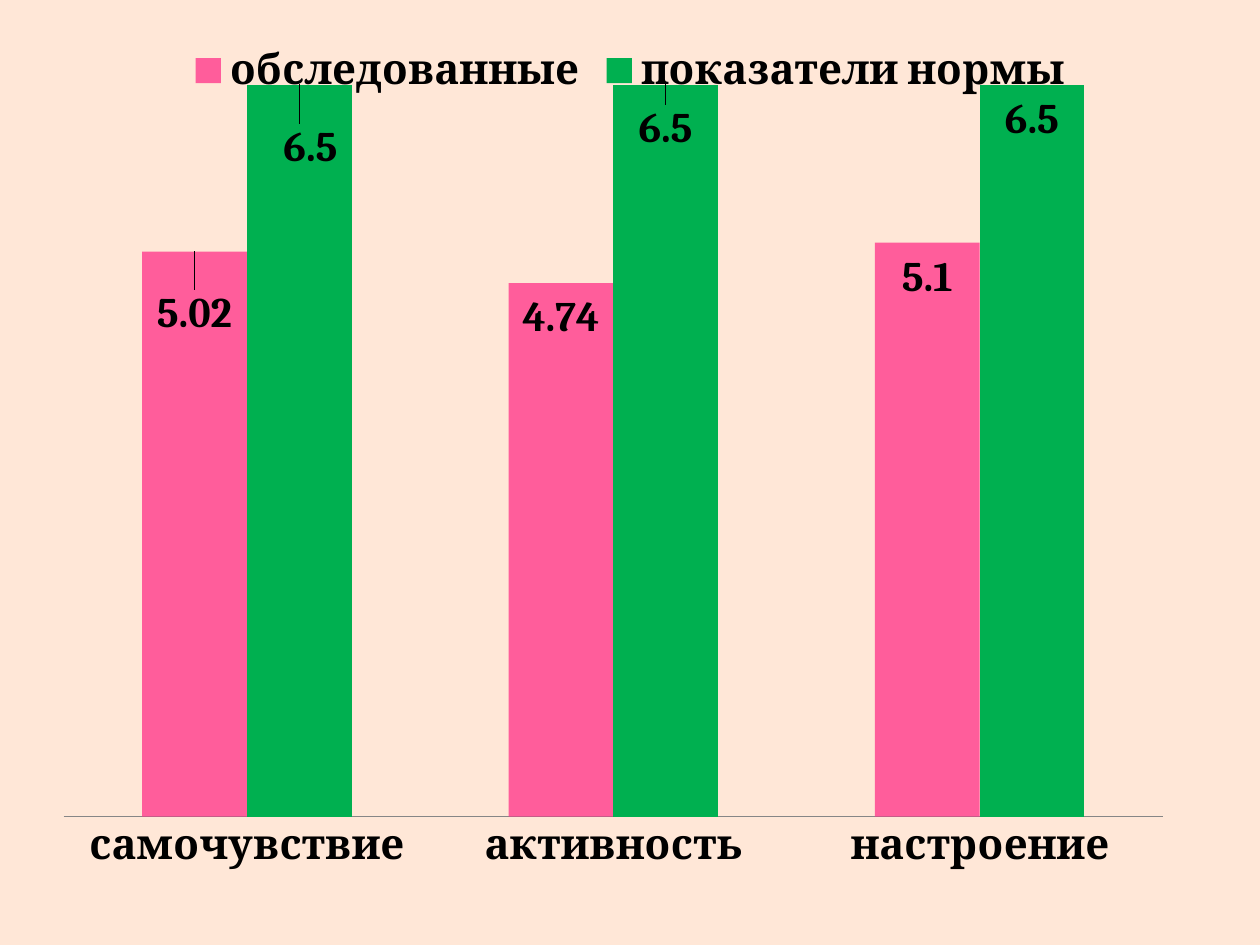
from dataclasses import dataclass

from lxml import etree
from pptx import Presentation
from pptx.chart.data import CategoryChartData
from pptx.dml.color import RGBColor
from pptx.enum.chart import (XL_CHART_TYPE, XL_LABEL_POSITION,
                             XL_LEGEND_POSITION, XL_TICK_MARK)
from pptx.oxml.ns import qn
from pptx.util import Cm, Pt

COLUMNS = XL_CHART_TYPE.COLUMN_CLUSTERED
OUTSIDE_END = XL_LABEL_POSITION.OUTSIDE_END
LEGEND_TOP = XL_LEGEND_POSITION.TOP
NO_TICKS = XL_TICK_MARK.NONE


@dataclass(frozen=True)
class Theme:
    background: RGBColor = RGBColor(0xFF, 0xE7, 0xD7)
    text: RGBColor = RGBColor(0, 0, 0)
    axis: RGBColor = RGBColor(0x86, 0x86, 0x86)
    surveyed: RGBColor = RGBColor(0xFF, 0x38, 0x8C)
    norm: RGBColor = RGBColor(0, 0xB0, 0x50)
    surveyed_alpha: int = 79
    font: str = "Cambria"
    size: Pt = Pt(24)


THEME = Theme()
FONT_FORMAT = {"name": THEME.font, "size": THEME.size, "bold": True}
CATEGORIES = ["самочувствие", "активность", "настроение"]
# Name, values, colour, and label shifts as fractions of the chart size
SERIES = [
    ("обследованные", [5.02, 4.74, 5.1], THEME.surveyed,
     [(0, 0.1), (0, 0.07), (0, 0.07)]),
    ("показатели нормы", [6.5, 6.5, 6.5], THEME.norm,
     [(0.01, 0.1), (0, 0.08), (0, 0.07)]),
]


def format_font(font):
    for name, value in FONT_FORMAT.items():
        setattr(font, name, value)
    font.color.rgb = THEME.text


def make_layout(**values):
    """Return a c:layout element holding the given manual layout values."""
    layout = etree.Element(qn("c:layout"))
    manual = etree.SubElement(layout, qn("c:manualLayout"))
    for name, value in values.items():
        etree.SubElement(manual, qn(f"c:{name}"), val=str(value))
    return layout


presentation = Presentation()
presentation.slide_width = Cm(25.4)
presentation.slide_height = Cm(19.05)
slide = presentation.slides.add_slide(presentation.slide_layouts[6])
slide.background.fill.solid()
slide.background.fill.fore_color.rgb = THEME.background

# Chart
chart_data = CategoryChartData()
chart_data.categories = CATEGORIES
for name, values, _, _ in SERIES:
    chart_data.add_series(name, values)
chart = slide.shapes.add_chart(
    COLUMNS, Cm(1.27), Cm(0.58), Cm(22.86), Cm(18.47), chart_data).chart
format_font(chart.font)
chart.has_title = False

# Legend and axes
chart.has_legend = True
chart.legend.position = LEGEND_TOP
chart.legend.include_in_layout = False
format_font(chart.legend.font)

category_axis = chart.category_axis
category_axis.major_tick_mark = NO_TICKS
category_axis.format.line.color.rgb = THEME.axis
format_font(category_axis.tick_labels.font)

value_format = {"minimum_scale": 0, "maximum_scale": 7,
                "has_major_gridlines": False, "visible": False}
for name, value in value_format.items():
    setattr(chart.value_axis, name, value)

# Columns and their labels
plot = chart.plots[0]
plot.gap_width = 150
plot.overlap = 0
plot.vary_by_categories = False
for series, (_, values, color, _) in zip(plot.series, SERIES):
    series.format.fill.solid()
    series.format.fill.fore_color.rgb = color
    series.data_labels.show_value = True
    format_font(series.data_labels.font)
    for index in range(len(values)):
        label = series.points[index].data_label
        label.position = OUTSIDE_END
        format_font(label.font)

# Label shifts, see-through first series and plot area placement
shifts = [shift for *_, series_shifts in SERIES for shift in series_shifts]
for label, (x, y) in zip(chart.element.xpath(".//c:dLbl"), shifts):
    label.find(qn("c:idx")).addnext(make_layout(x=x, y=y))

surveyed_color = chart.element.xpath(".//c:ser/c:spPr/a:solidFill/a:srgbClr")[0]
etree.SubElement(surveyed_color, qn("a:alpha"),
                 val=str(THEME.surveyed_alpha * 1000))

plot_area = chart.element.xpath(".//c:plotArea")[0]
for layout in plot_area.findall(qn("c:layout")):
    plot_area.remove(layout)
plot_area.insert(0, make_layout(
    layoutTarget="inner", xMode="edge", yMode="edge",
    x=0, y=0, w=0.97, h=0.86))

presentation.save("out.pptx")
